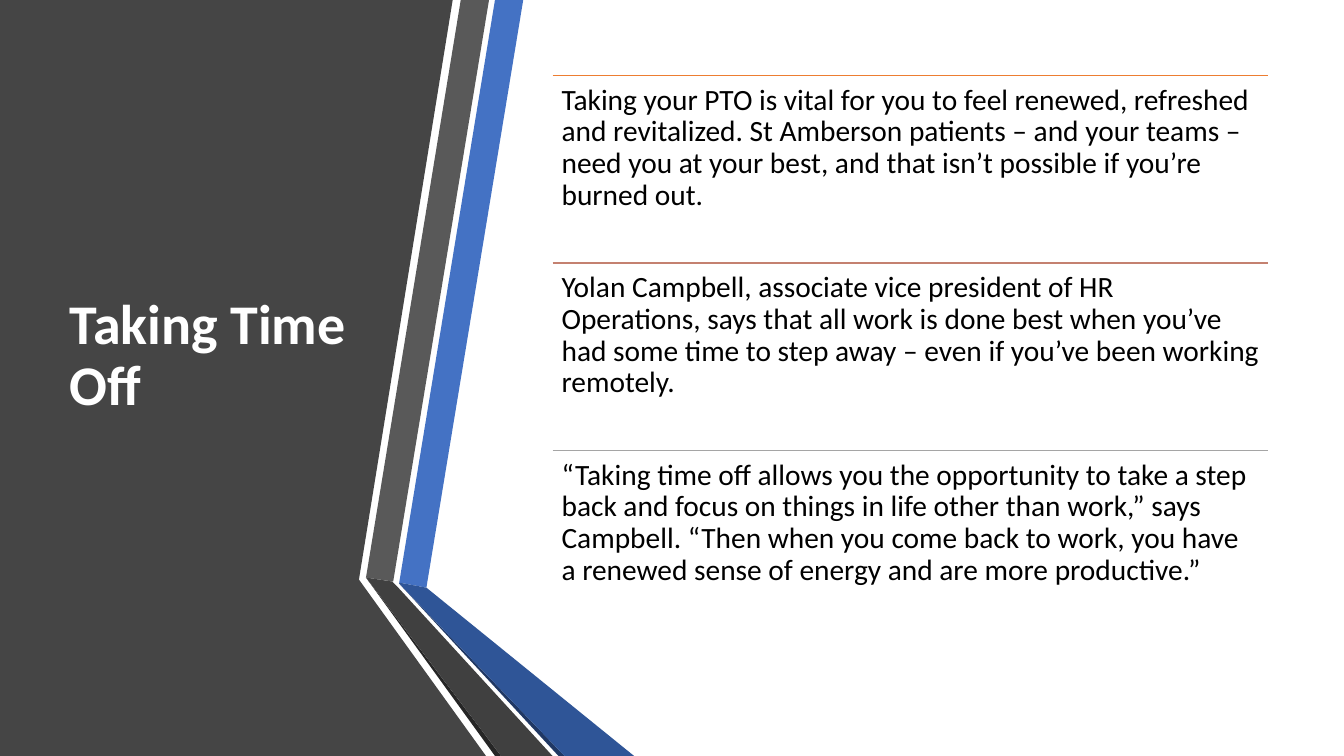
from lxml import etree
from pptx import Presentation
from pptx.dml.color import RGBColor
from pptx.enum.shapes import MSO_CONNECTOR
from pptx.enum.text import MSO_ANCHOR, MSO_AUTO_SIZE, PP_ALIGN
from pptx.oxml.ns import qn
from pptx.util import Pt

PX = 9144
STRAIGHT = MSO_CONNECTOR.STRAIGHT
MIDDLE = MSO_ANCHOR.MIDDLE
TOP = MSO_ANCHOR.TOP
LEFT = PP_ALIGN.LEFT
NO_AUTOFIT = MSO_AUTO_SIZE.NONE
FONT = "Calibri"
TITLE_ONLY = 5

WHITE = RGBColor(0xFF, 0xFF, 0xFF)
BLACK = RGBColor(0x00, 0x00, 0x00)
CHARCOAL = RGBColor(0x45, 0x45, 0x45)
BLUE = RGBColor(0x44, 0x72, 0xC4)
GRAY = RGBColor(0x59, 0x59, 0x59)
NEAR_BLACK = RGBColor(0x26, 0x26, 0x26)
NAVY = RGBColor(0x20, 0x38, 0x64)
DEEP_BLUE = RGBColor(0x2F, 0x55, 0x97)
DARK_GRAY = RGBColor(0x40, 0x40, 0x40)
ORANGE = RGBColor(0xED, 0x7D, 0x31)
ROSE = RGBColor(0xC4, 0x81, 0x70)
SILVER = RGBColor(0xA5, 0xA5, 0xA5)

RIBBONS = [
    (CHARCOAL, [(0, 0), (449, 0), (356, 575), (482, 750), (0, 750)]),
    (BLUE, [(396, 578), (423, 583), (519, 0), (491, 0)]),
    (GRAY, [(485, 0), (457, 0), (363, 573), (390, 577)]),
    (NEAR_BLACK, [(363, 573), (491, 750), (497, 750)]),
    (NAVY, [(396, 579), (554, 750), (560, 750)]),
    (DEEP_BLUE, [(396, 579), (560, 750), (629, 750), (423, 583), (396, 578)]),
    (DARK_GRAY, [(548, 750), (395, 583), (389, 577), (363, 573), (497, 750)]),
]

STATEMENTS = [
    (ORANGE, "Taking your PTO is vital for you to feel renewed, refreshed and "
             "revitalized. St Amberson patients – and your teams – need you at "
             "your best, and that isn’t possible if you’re burned out."),
    (ROSE, "Yolan Campbell, associate vice president of HR Operations, says that "
           "all work is done best when you’ve had some time to step away – even "
           "if you’ve been working remotely."),
    (SILVER, "“Taking time off allows you the opportunity to take a step back and "
             "focus on things in life other than work,” says Campbell. “Then when "
             "you come back to work, you have a renewed sense of energy and are "
             "more productive.”"),
]
STATEMENT_LEFT, STATEMENT_TOP = 548, 75
STATEMENT_WIDTH, STATEMENT_HEIGHT = 710, 186


def place(shape, left, top, width, height):
    shape.left, shape.top = left * PX, top * PX
    shape.width, shape.height = width * PX, height * PX


def write(frame, text, size, color, anchor, bold=False):
    frame.text = text
    frame.word_wrap = True
    frame.auto_size = NO_AUTOFIT
    frame.vertical_anchor = anchor
    paragraph = frame.paragraphs[0]
    paragraph.alignment = LEFT
    paragraph.line_spacing = 0.9
    font = paragraph.runs[0].font
    font.name, font.size, font.bold = FONT, Pt(size), bold
    font.color.rgb = color


def add_ribbon(slide, color, corners):
    outline = slide.shapes.build_freeform(*corners[0], scale=PX)
    outline.add_line_segments(corners[1:], close=True)
    ribbon = outline.convert_to_shape()
    ribbon.shadow.inherit = False
    ribbon.fill.solid()
    ribbon.fill.fore_color.rgb = color
    ribbon.line.fill.background()


def add_title(slide, text):
    title = slide.shapes.title
    place(title, 59, 75, 304, 558)
    write(title.text_frame, text, 40, WHITE, MIDDLE, bold=True)
    slide.shapes._spTree.append(title._element)


def add_rule(slide, top, color):
    y = top * PX
    rule = slide.shapes.add_connector(
        STRAIGHT, STATEMENT_LEFT * PX, y, (STATEMENT_LEFT + STATEMENT_WIDTH) * PX, y)
    rule.line.color.rgb = color
    rule.line.width = Pt(1)
    etree.SubElement(rule._element.spPr, qn("a:effectLst"))
    return rule


def add_statement(slide, top, color, text):
    rule = add_rule(slide, top, color)
    statement = slide.shapes.add_textbox(0, 0, 0, 0)
    place(statement, STATEMENT_LEFT, top, STATEMENT_WIDTH, STATEMENT_HEIGHT)
    frame = statement.text_frame
    frame.margin_left = frame.margin_right = 9 * PX
    frame.margin_top = frame.margin_bottom = 9 * PX
    write(frame, text, 21, BLACK, TOP)
    return rule


def main():
    deck = Presentation()
    deck.slide_width, deck.slide_height = 1333 * PX, 750 * PX
    slide = deck.slides.add_slide(deck.slide_layouts[TITLE_ONLY])
    for color, corners in RIBBONS:
        add_ribbon(slide, color, corners)
    add_title(slide, "Taking Time Off")
    for row, (color, text) in enumerate(STATEMENTS):
        add_statement(slide, STATEMENT_TOP + row * STATEMENT_HEIGHT, color, text)
    deck.save("out.pptx")


if __name__ == "__main__":
    main()
